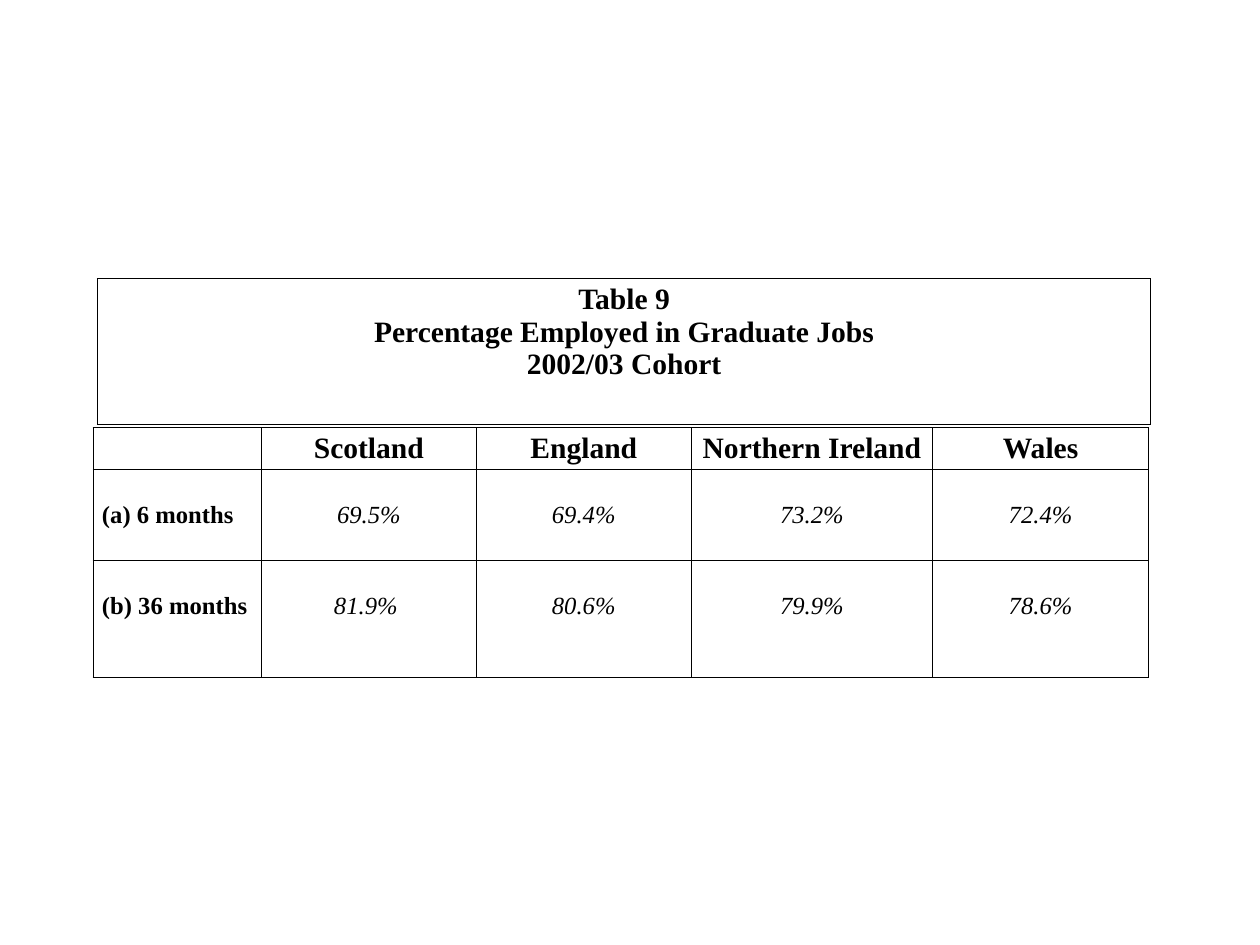
from lxml.etree import SubElement
from pptx import Presentation
from pptx.dml.color import RGBColor
from pptx.enum.text import PP_ALIGN
from pptx.oxml.ns import qn
from pptx.util import Cm, Pt

BLACK = RGBColor(0, 0, 0)
FONT = "Times New Roman"
TITLE = "Table 9\nPercentage Employed in Graduate Jobs\n2002/03 Cohort"
HEADS = ["", "Scotland", "England", "Northern Ireland", "Wales"]
ROWS = [
    ["(a) 6 months", "69.5%", "69.4%", "73.2%", "72.4%"],
    ["(b) 36 months", "81.9% ", "80.6%", "79.9%", "78.6%"],
]


def add_grid(slide, left, top, widths, heights):
    """Add an unstyled table with the given column widths and row heights in cm."""
    frame = slide.shapes.add_table(
        len(heights), len(widths), Cm(left), Cm(top),
        Cm(sum(widths)), Cm(sum(heights)))
    table = frame.table
    table.first_row = table.horz_banding = False
    for col, width in zip(table.columns, widths):
        col.width = Cm(width)
    for row, height in zip(table.rows, heights):
        row.height = Cm(height)
    for cell in table.iter_cells():
        add_border(cell)
        cell.fill.background()
    return table


def add_border(cell):
    props = cell._tc.get_or_add_tcPr()
    for side in ("lnL", "lnR", "lnT", "lnB"):
        line = SubElement(props, qn(f"a:{side}"), w=str(Pt(1)))
        fill = SubElement(line, qn("a:solidFill"))
        SubElement(fill, qn("a:srgbClr"), val=str(BLACK))


def set_text(cell, text, size=24, bold=True, italic=False, align=PP_ALIGN.CENTER):
    cell.text_frame.text = text
    for para in cell.text_frame.paragraphs:
        para.alignment = align
        for run in para.runs:
            font = run.font
            font.name, font.size = FONT, Pt(size)
            font.bold, font.italic = bold, italic
            font.color.rgb = BLACK


def fill_row(table, index, label, values):
    """Write a bold row label and its italic values, set down from the top."""
    name = table.cell(index, 0)
    set_text(name, label, size=20, align=PP_ALIGN.LEFT)
    name.margin_top = Cm(0.92)
    for col, value in enumerate(values, 1):
        cell = table.cell(index, col)
        set_text(cell, value, size=20, bold=False, italic=True)
        cell.margin_top = Cm(0.92)


def main():
    deck = Presentation()
    deck.slide_width, deck.slide_height = Cm(36.12), Cm(27.1)
    slide = deck.slides.add_slide(deck.slide_layouts[6])

    title = add_grid(slide, 2.79, 8, [30.2], [4.17])
    set_text(title.cell(0, 0), TITLE)

    jobs = add_grid(slide, 2.67, 12.27, [4.83, 6.15, 6.17, 6.91, 6.2],
                    [1.18, 2.62, 3.35])
    for col, head in enumerate(HEADS):
        set_text(jobs.cell(0, col), head)
    for index, (label, *values) in enumerate(ROWS, 1):
        fill_row(jobs, index, label, values)

    deck.save("out.pptx")


if __name__ == "__main__":
    main()
